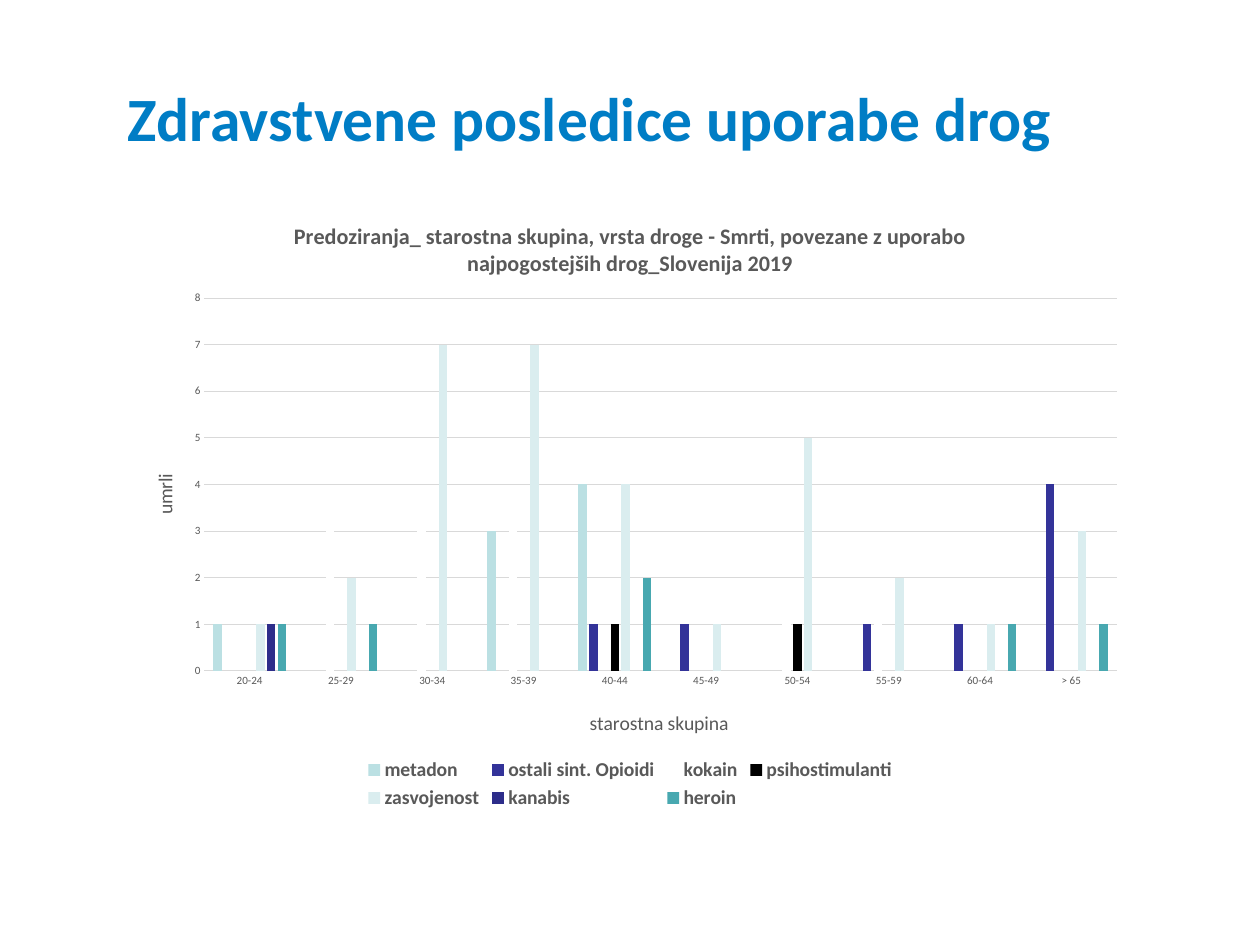
from lxml import etree
from pptx import Presentation
from pptx import util as u
from pptx.chart.data import CategoryChartData
from pptx.dml.color import RGBColor
from pptx.enum import chart as ch, text
from pptx.oxml.ns import qn

# Content
HEAD = "Zdravstvene posledice uporabe drog"
TITLE = ("Predoziranja_ starostna skupina, vrsta droge - Smrti, povezane "
         "z uporabo najpogostejših drog_Slovenija 2019")
AGE_TITLE, DEAD_TITLE = "starostna skupina", "umrli"
AGES = ["20-24", "25-29", "30-34", "35-39", "40-44",
        "45-49", "50-54", "55-59", "60-64", "> 65"]
NO = None
DRUGS = [
    ("metadon", RGBColor(0xBB, 0xE0, 0xE3), [1, NO, NO, 3, 4, NO, NO, NO, NO, NO]),
    ("ostali sint. Opioidi", RGBColor(0x33, 0x33, 0x99), [NO, NO, NO, NO, 1, 1, NO, 1, 1, 4]),
    ("kokain", RGBColor(0xFF, 0xFF, 0xFF), [NO, 3, 3, 3, NO, NO, 2, 1, NO, NO]),
    ("psihostimulanti", RGBColor(0, 0, 0), [NO, NO, NO, NO, 1, NO, 1, NO, NO, NO]),
    ("zasvojenost", RGBColor(0xDA, 0xED, 0xEF), [1, 2, 7, 7, 4, 1, 5, 2, 1, 3]),
    ("kanabis", RGBColor(0x2D, 0x2D, 0x8A), [1, NO, NO, NO, NO, NO, NO, NO, NO, NO]),
    ("heroin", RGBColor(0x48, 0xA8, 0xB0), [1, 1, NO, NO, 2, NO, NO, NO, 1, 1]),
]
BLUE = RGBColor(0x00, 0x7D, 0xC5)
GRAY = RGBColor(0x59, 0x59, 0x59)
PALE = RGBColor(0xD9, 0xD9, 0xD9)
FACE = "Calibri"

# Places in px: left, top, width, height
SLIDE = (1260, 945)
HEAD_BOX = (123, 47, 1014, 112)
CHART_BOX = (123, 200, 1014, 614)
PLOT_BOX = (204, 298, 913, 373)
AGE_SPOT = (586, 706)
DEAD_SPOT = (148, 470)
INSET = 5


def px(n):
    return round(n * 914400 / 88.6)


def style(font, size, color, bold=False):
    font.name, font.size, font.bold = FACE, u.Pt(size), bold
    font.color.rgb = color


def write(frame, words, size, color, bold=False):
    run = frame.paragraphs[0].add_run()
    run.text = words
    style(run.font, size, color, bold)


def layout(spot, inner=False):
    """Manual layout as fractions of the chart box."""
    node = etree.Element(qn("c:layout"))
    man = etree.SubElement(node, qn("c:manualLayout"))
    left, top, wide, high = CHART_BOX
    parts = [("layoutTarget", "inner")] if inner else []
    parts += [("xMode", "edge"), ("yMode", "edge")]
    fracs = ((spot[0] - left) / wide, (spot[1] - top) / high,
             *(n / side for n, side in zip(spot[2:], (wide, high))))
    parts += [(key, f"{n:.4f}") for key, n in zip("xywh", fracs)]
    for key, val in parts:
        etree.SubElement(man, qn("c:" + key)).set("val", val)
    return node


def drop(node):
    for old in node.findall(qn("c:layout")):
        node.remove(old)


def name_axis(axis, words, spot, turn):
    title = axis.axis_title
    write(title.text_frame, words, 16, GRAY)
    node = title._element
    node.find(".//" + qn("a:bodyPr")).set("rot", str(turn * 60000))
    drop(node)
    node.find(qn("c:tx")).addnext(layout(spot))


deck = Presentation()
deck.slide_width, deck.slide_height = map(px, SLIDE)
slide = deck.slides.add_slide(deck.slide_layouts[6])

# Heading
frame = slide.shapes.add_textbox(*map(px, HEAD_BOX)).text_frame
frame.word_wrap = True
frame.vertical_anchor = text.MSO_ANCHOR.BOTTOM
frame.margin_left = frame.margin_right = px(INSET)
frame.margin_top = frame.margin_bottom = px(INSET)
write(frame, HEAD, 50, BLUE, True)

# Chart
data = CategoryChartData()
data.categories = AGES
for name, color, vals in DRUGS:
    data.add_series(name, vals)
chart = slide.shapes.add_chart(
    ch.XL_CHART_TYPE.COLUMN_CLUSTERED, *map(px, CHART_BOX), data).chart
style(chart.font, 10, GRAY)
chart.has_title = True
write(chart.chart_title.text_frame, TITLE, 18, GRAY, True)
chart.chart_title.include_in_layout = False

# Columns
plot = chart.plots[0]
plot.gap_width, plot.overlap, plot.vary_by_categories = 219, -27, False
for row, (name, color, vals) in zip(plot.series, DRUGS):
    row.format.fill.solid()
    row.format.fill.fore_color.rgb = color
    row.invert_if_negative = False

# Axes
ages, dead = chart.category_axis, chart.value_axis
for axis in (ages, dead):
    axis.major_tick_mark = axis.minor_tick_mark = ch.XL_TICK_MARK.NONE
    style(axis.tick_labels.font, 9, GRAY)
dead.minimum_scale, dead.maximum_scale, dead.major_unit = 0, 8, 1
dead.format.line.fill.background()
dead.has_major_gridlines = True
for line in (ages.format.line, dead.major_gridlines.format.line):
    line.color.rgb = PALE
    line.width = u.Pt(0.75)
name_axis(ages, AGE_TITLE, AGE_SPOT, 0)
name_axis(dead, DEAD_TITLE, DEAD_SPOT, -90)

# Plot area and legend
area = chart._chartSpace.find(".//" + qn("c:plotArea"))
drop(area)
area.insert(0, layout(PLOT_BOX, inner=True))
chart.has_legend = True
chart.legend.position = ch.XL_LEGEND_POSITION.BOTTOM
chart.legend.include_in_layout = False
style(chart.legend.font, 16, GRAY, True)

deck.save("out.pptx")
